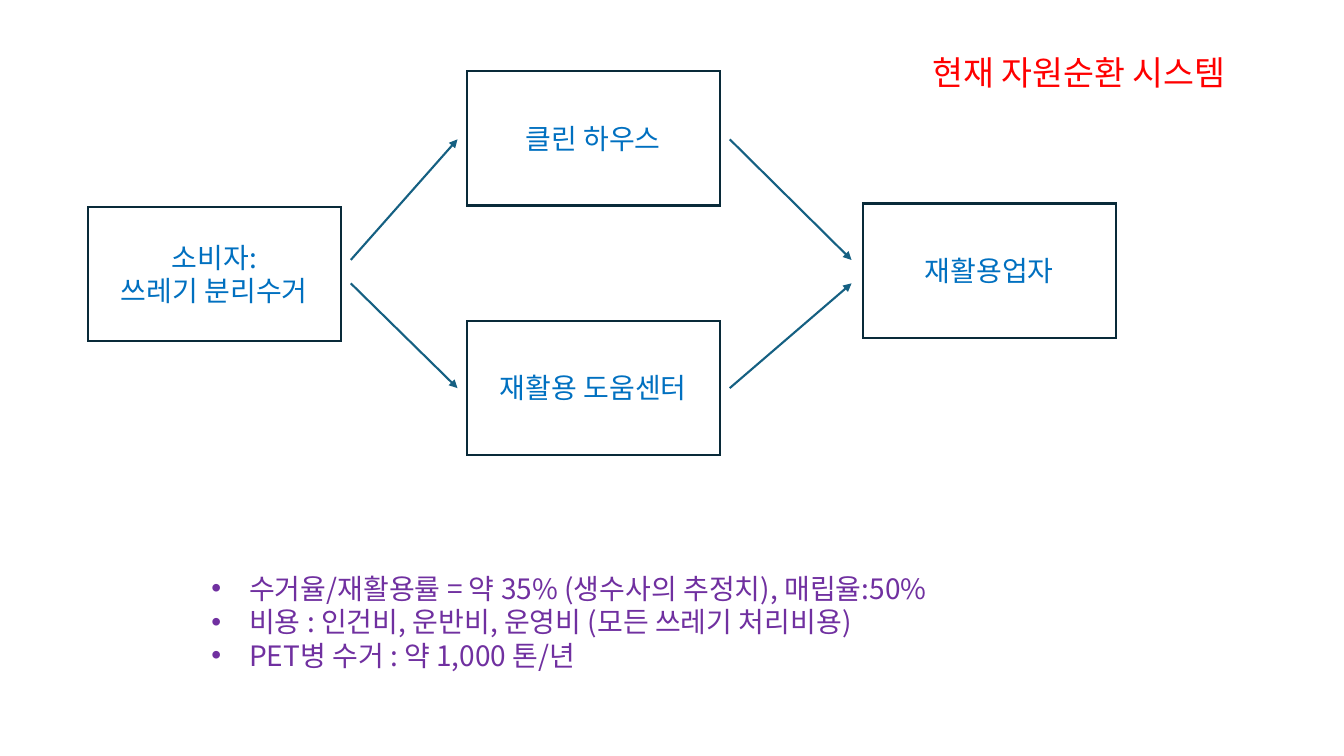
from lxml.etree import SubElement as Sub
from pptx import Presentation
from pptx.dml.color import RGBColor
from pptx.enum.shapes import MSO_CONNECTOR as Link, MSO_SHAPE as Kind
from pptx.enum.text import MSO_ANCHOR as Anchor, MSO_AUTO_SIZE as Fit, PP_ALIGN as Align
from pptx.oxml.ns import qn
from pptx.util import Cm, Pt

FACE = "Noto Sans CJK KR"


def paint(target, color):
    target.rgb = RGBColor.from_string(color)


def write(frame, text, size, color, align):
    """Fill a text frame, with one paragraph per line of text."""
    frame.text = text
    for para in frame.paragraphs:
        para.alignment = align
        for run in para.runs:
            for name, value in {"name": FACE, "size": Pt(size), "bold": False}.items():
                setattr(run.font, name, value)
            paint(run.font.color, color)
            # East Asian glyphs take their font from a separate element
            Sub(run.font._element, qn("a:ea"), typeface=FACE)


deck = Presentation()
deck.slide_width, deck.slide_height = Cm(33.87), Cm(19.05)
slide = deck.slides.add_slide(deck.slide_layouts[5])
shapes = slide.shapes

# Title
title = shapes.title
place = {"left": Cm(23.24), "top": Cm(1.17), "width": Cm(8.81), "height": Cm(1.27)}
for name, value in place.items():
    setattr(title, name, value)
frame = title.text_frame
write(frame, "현재 자원순환 시스템", 24, "FF0000", Align.LEFT)
for name, value in {"word_wrap": False, "auto_size": Fit.NONE,
                    "vertical_anchor": Anchor.TOP}.items():
    setattr(frame, name, value)

# Stages
stages = [
    ("소비자:\n쓰레기 분리수거", 2.21, 5.21),
    ("클린 하우스", 11.76, 1.8),
    ("재활용 도움센터", 11.76, 8.08),
    ("재활용업자", 21.74, 5.13),
]
for text, left, top in stages:
    box = shapes.add_shape(Kind.RECTANGLE, Cm(left), Cm(top), Cm(6.38), Cm(3.38))
    box.shadow.inherit = False
    box.fill.solid()
    paint(box.fill.fore_color, "FFFFFF")
    paint(box.line.color, "092A39")
    box.line.width = Pt(1.5)
    Sub(box.line._get_or_add_ln(), qn("a:miter"), lim="800000")
    box.text_frame.vertical_anchor = Anchor.MIDDLE
    write(box.text_frame, text, 20, "0070C0", Align.CENTER)

# Flow: the upper and lower route, each in and out of the middle column
for mid, side in [(3.51, 6.55), (9.78, 7.14)]:
    for x1, y1, x2, y2 in [(8.84, side, 11.53, mid), (18.39, mid, 21.46, side)]:
        arrow = shapes.add_connector(Link.STRAIGHT, Cm(x1), Cm(y1), Cm(x2), Cm(y2))
        paint(arrow.line.color, "156082")
        arrow.line.width = Pt(1.5)
        Sub(arrow.line._get_or_add_ln(), qn("a:tailEnd"), type="triangle")
        Sub(arrow._element.spPr, qn("a:effectLst"))

# Key figures
facts = [
    "수거율/재활용률 = 약 35% (생수사의 추정치), 매립율:50%",
    "비용 : 인건비, 운반비, 운영비 (모든 쓰레기 처리비용)",
    "PET병 수거 : 약 1,000 톤/년",
]
frame = shapes.add_textbox(Cm(5.08), Cm(14.27), Cm(24.23), Cm(2.82)).text_frame
frame.word_wrap = True
frame.auto_size = Fit.SHAPE_TO_FIT_TEXT
write(frame, "\n".join(facts), 20, "7030A0", Align.LEFT)
for para in frame.paragraphs:
    props = para._p.get_or_add_pPr()
    props.set("marL", str(Cm(0.95)))
    props.set("indent", str(-Cm(0.95)))
    Sub(props, qn("a:buFont"), typeface="Arial")
    Sub(props, qn("a:buChar"), char="•")

deck.save("out.pptx")
